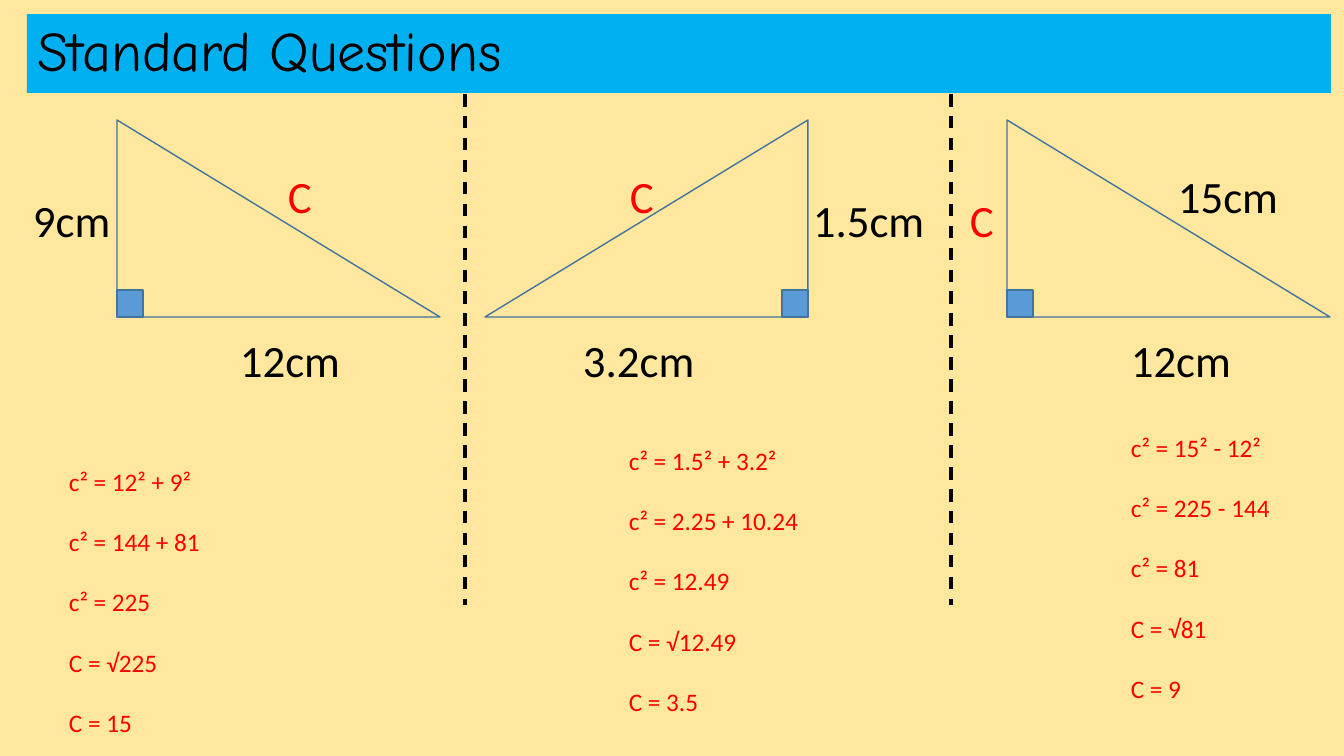
from dataclasses import dataclass

from lxml.etree import SubElement
from pptx import Presentation
from pptx.dml.color import RGBColor
from pptx.enum.dml import MSO_LINE
from pptx.enum.shapes import MSO_CONNECTOR, MSO_SHAPE
from pptx.enum.text import MSO_ANCHOR, MSO_AUTO_SIZE, PP_ALIGN
from pptx.oxml.ns import qn
from pptx.util import Emu, Pt

EMU_PER_PX = 914400 / 100.8
TITLE_ONLY = 5


@dataclass(frozen=True)
class Theme:
    background: RGBColor = RGBColor(0xFF, 0xE7, 0x9E)
    banner: RGBColor = RGBColor(0x00, 0xB0, 0xF0)
    corner: RGBColor = RGBColor(0x5B, 0x9B, 0xD5)
    outline: RGBColor = RGBColor(0x43, 0x73, 0x9E)
    ink: RGBColor = RGBColor(0x00, 0x00, 0x00)
    answer: RGBColor = RGBColor(0xFF, 0x00, 0x00)
    title_font: str = "Comic Neue"
    body_font: str = "Calibri"
    title_size: Pt = Pt(40)
    label_size: Pt = Pt(32)
    working_size: Pt = Pt(18)
    working_gap: Pt = Pt(21.5)
    outline_width: Pt = Pt(1)
    divider_width: Pt = Pt(2.25)


@dataclass(frozen=True)
class Label:
    text: str
    left: int
    top: int
    width: int


@dataclass(frozen=True)
class Question:
    triangle_left: int
    flipped: bool
    labels: tuple
    working_box: tuple
    working: tuple


HYPOTENUSE_TOP, UPRIGHT_TOP, BASE_TOP = 164, 188, 328
UNKNOWN = "C"
QUESTIONS = (
    Question(
        117, False,
        (Label("9cm", 23, UPRIGHT_TOP, 99),
         Label("12cm", 230, BASE_TOP, 122),
         Label(UNKNOWN, 278, HYPOTENUSE_TOP, 44)),
        (59, 461, 153, 285),
        ("c² = 12² + 9²", "c² = 144 + 81", "c² = 225", "C = √225", "C = 15"),
    ),
    Question(
        485, True,
        (Label("1.5cm", 803, UPRIGHT_TOP, 133),
         Label("3.2cm", 573, BASE_TOP, 133),
         Label(UNKNOWN, 620, HYPOTENUSE_TOP, 44)),
        (619, 440, 192, 285),
        ("c² = 1.5² + 3.2²", "c² = 2.25 + 10.24", "c² = 12.49", "C = √12.49", "C = 3.5"),
    ),
    Question(
        1007, False,
        (Label(UNKNOWN, 960, UPRIGHT_TOP, 44),
         Label("12cm", 1121, BASE_TOP, 122),
         Label("15cm", 1168, HYPOTENUSE_TOP, 122)),
        (1121, 427, 161, 285),
        ("c² = 15² - 12²", "c² = 225 - 144", "c² = 81", "C = √81", "C = 9"),
    ),
)


def px(*lengths):
    return [Emu(round(length * EMU_PER_PX)) for length in lengths]


def set_attributes(target, values):
    for name, value in values.items():
        setattr(target, name, value)


class SlideBuilder:
    def __init__(self, presentation, theme):
        self.theme = theme
        self.slide = presentation.slides.add_slide(presentation.slide_layouts[TITLE_ONLY])
        fill = self.slide.background.fill
        fill.solid()
        fill.fore_color.rgb = theme.background

    def format_font(self, paragraph, name, size, color):
        set_attributes(paragraph.font, {"name": name, "size": size, "bold": False})
        paragraph.font.color.rgb = color

    def title(self, text, box):
        title = self.slide.shapes.title
        set_attributes(title, dict(zip(("left", "top", "width", "height"), px(*box))))
        title.fill.solid()
        title.fill.fore_color.rgb = self.theme.banner
        title.text_frame.text = text
        set_attributes(title.text_frame, {
            "word_wrap": True,
            "auto_size": MSO_AUTO_SIZE.NONE,
            "vertical_anchor": MSO_ANCHOR.MIDDLE,
        })
        paragraph = title.text_frame.paragraphs[0]
        set_attributes(paragraph, {"alignment": PP_ALIGN.LEFT, "line_spacing": 0.9})
        self.format_font(paragraph, self.theme.title_font, self.theme.title_size, self.theme.ink)

    def outlined_shape(self, shapes, kind, box, fill=None, flipped=False):
        shape = shapes.add_shape(kind, *px(*box))
        shape.shadow.inherit = False
        if fill is None:
            shape.fill.background()
        else:
            shape.fill.solid()
            shape.fill.fore_color.rgb = fill
        shape.line.color.rgb = self.theme.outline
        shape.line.width = self.theme.outline_width
        if flipped:
            shape._element.spPr.xfrm.set("flipH", "1")

    def text(self, shapes, lines, box, size, color, gap=None):
        frame = shapes.add_textbox(*px(*box)).text_frame
        set_attributes(frame, {"word_wrap": False, "auto_size": MSO_AUTO_SIZE.SHAPE_TO_FIT_TEXT})
        for index, line in enumerate(lines):
            paragraph = frame.add_paragraph() if index else frame.paragraphs[0]
            paragraph.text = line
            if index:
                paragraph.space_before = gap
            self.format_font(paragraph, self.theme.body_font, size, color)

    def triangle(self, question):
        """Draw a labelled right-angled triangle as one group."""
        shapes = self.slide.shapes.add_group_shape().shapes
        left, top, width, height = question.triangle_left, 120, 323, 197
        corner_width, corner_height = 26, 27
        corner_left = left + width - corner_width if question.flipped else left
        self.outlined_shape(shapes, MSO_SHAPE.RIGHT_TRIANGLE, (left, top, width, height),
                            flipped=question.flipped)
        self.outlined_shape(
            shapes, MSO_SHAPE.RECTANGLE,
            (corner_left, top + height - corner_height, corner_width, corner_height),
            fill=self.theme.corner)
        for label in question.labels:
            color = self.theme.answer if label.text == UNKNOWN else self.theme.ink
            self.text(shapes, [label.text], (label.left, label.top, label.width, 65),
                      self.theme.label_size, color)

    def working(self, question):
        self.text(self.slide.shapes, question.working, question.working_box,
                  self.theme.working_size, self.theme.answer, self.theme.working_gap)

    def divider(self, left, top, bottom):
        connector = self.slide.shapes.add_connector(
            MSO_CONNECTOR.STRAIGHT, *px(left, top, left, bottom))
        connector.line.color.rgb = self.theme.ink
        set_attributes(connector.line, {
            "width": self.theme.divider_width, "dash_style": MSO_LINE.DASH})
        SubElement(connector._element.spPr, qn("a:effectLst"))


def main():
    presentation = Presentation()
    presentation.slide_width, presentation.slide_height = px(1344, 756)
    builder = SlideBuilder(presentation, Theme())
    builder.title("Standard Questions", (27, 14, 1304, 79))
    for question in QUESTIONS:
        builder.triangle(question)
    for left in (465, 951):
        builder.divider(left, 94, 605)
    for question in QUESTIONS:
        builder.working(question)
    presentation.save("out.pptx")


if __name__ == "__main__":
    main()
